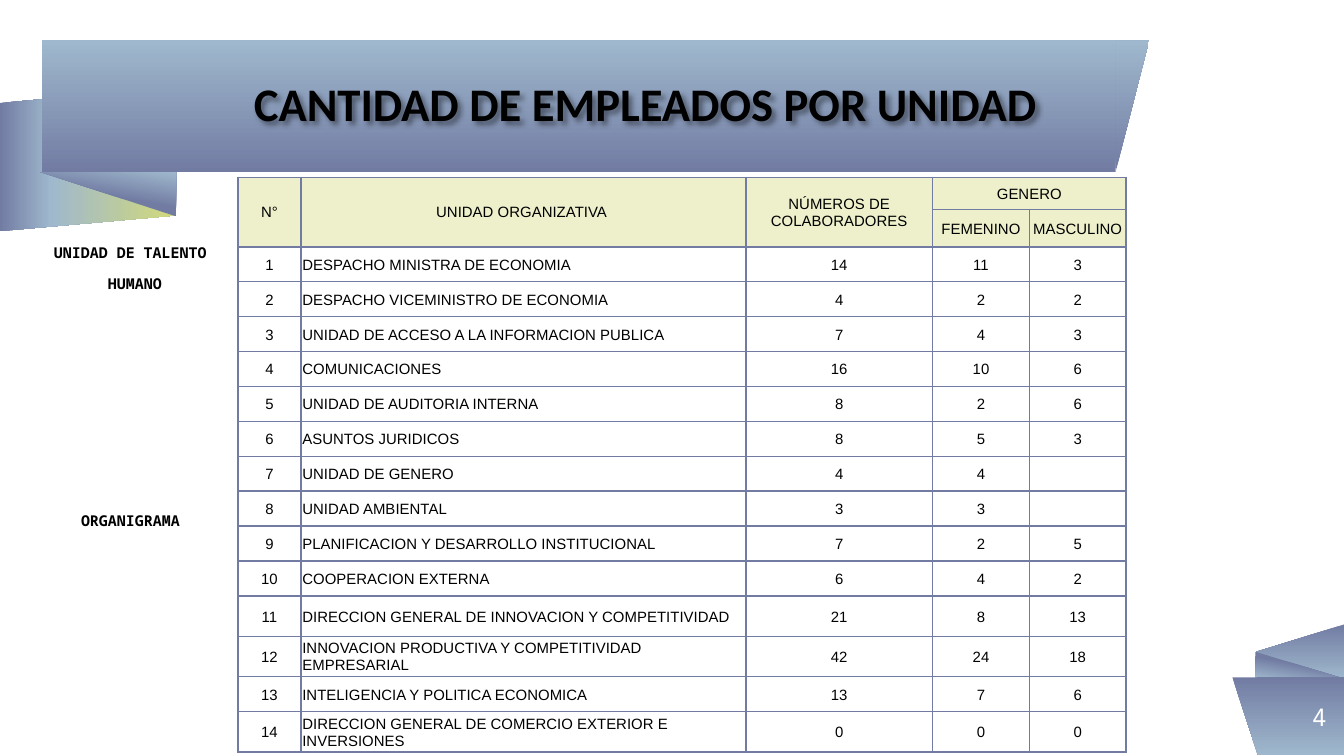
from lxml import etree
from pptx import Presentation, util as u
from pptx.dml.color import RGBColor
from pptx.enum import shapes, text
from pptx.oxml import parse_xml
from pptx.oxml.ns import qn

W = 10
H = W * 9 / 16
NS = 'xmlns:a="http://schemas.openxmlformats.org/drawingml/2006/main"'
PURPLE, BLUE, LIME, CREAM = "727CA3", "9FB8CD", "D2DA7A", "EDF0CA"
BLACK, WHITE = "000000", "FFFFFF"
MONO = "Noto Sans Mono"

# Content
TITLE = "CANTIDAD DE EMPLEADOS POR UNIDAD"
NUMBER = "4"
SIDE = [("UNIDAD DE TALENTO ", 6), ("HUMANO", 6), ("ORGANIGRAMA ", 116)]  # text, space before
HEAD = [
    ("N°", "UNIDAD ORGANIZATIVA ", "NÚMEROS DE COLABORADORES", "GENERO", ""),
    ("", "", "", "FEMENINO", "MASCULINO"),
]
UNITS = [
    ("DESPACHO MINISTRA DE ECONOMIA", 14, 11, 3),
    ("DESPACHO VICEMINISTRO DE ECONOMIA", 4, 2, 2),
    ("UNIDAD DE ACCESO A LA INFORMACION PUBLICA", 7, 4, 3),
    ("COMUNICACIONES", 16, 10, 6),
    ("UNIDAD DE AUDITORIA INTERNA", 8, 2, 6),
    ("ASUNTOS JURIDICOS", 8, 5, 3),
    ("UNIDAD DE GENERO", 4, 4, ""),
    ("UNIDAD AMBIENTAL", 3, 3, ""),
    ("PLANIFICACION Y DESARROLLO INSTITUCIONAL", 7, 2, 5),
    ("COOPERACION EXTERNA", 6, 4, 2),
    ("DIRECCION GENERAL DE INNOVACION Y COMPETITIVIDAD", 21, 8, 13),
    ("INNOVACION PRODUCTIVA Y COMPETITIVIDAD EMPRESARIAL", 42, 24, 18),
    ("INTELIGENCIA Y POLITICA ECONOMICA", 13, 7, 6),
    ("DIRECCION GENERAL DE COMERCIO EXTERIOR E INVERSIONES", 0, 0, 0),
]
MERGES = [(0, 0, 1, 0), (0, 1, 1, 1), (0, 2, 1, 2), (0, 3, 0, 4)]
COLS = [0.47, 3.31, 1.39, 0.72, 0.72]
HEAD_ROWS = [0.24, 0.25]
ROW, TALL_ROW = 0.26, 0.3
TALL_UNITS = (11, 12, 14)

# Ribbon pieces: preset, box, rotation, flipped, adjustment, gradient stops, angle
FADE = [(0, PURPLE), (100, BLUE)]
FOLD = [(0, PURPLE), (47, PURPLE), (100, BLUE)]
TAIL = [(0, PURPLE), (29, BLUE), (100, LIME)]
S = shapes.MSO_SHAPE
BANNER = (0.31, 0.3, 7.99, 0.98)
CORNER = (9.35, 5.04, 0.65, 0.58)
RIBBONS = [
    (S.PARALLELOGRAM, (0.12, 0.53, 1.07, 1.31), 270, True, 0.109, TAIL, 90),
    (S.RIGHT_TRIANGLE, (0.3, 1.28, 1.01, 0.33), 180, False, None, FOLD, 100),
    (S.RECTANGLE, BANNER, 180, True, None, FADE, 90),
    (S.ISOSCELES_TRIANGLE, (8.3, 0.3, 0.25, 0.98), 180, False, 1, FADE, 90),
    (S.ISOSCELES_TRIANGLE, (9.47, 4.52, 0.41, 0.66), 270, False, 0.5, FADE, 180),
    (S.RIGHT_TRIANGLE, (9.34, 4.85, 0.66, 0.2), 0, False, None, FOLD, 100),
    (S.RECTANGLE, CORNER, 180, False, None, FADE, 270),
    (S.ISOSCELES_TRIANGLE, (9.17, 5.04, 0.19, 0.58), 180, True, 1, FADE, 270),
]


def color(h):
    return RGBColor.from_string(h)


def inches(box):
    return [u.Inches(v) for v in box]


def add_run(p, words, font, size, c=BLACK, bold=False):
    r = p.add_run()
    r.text = words
    r.font.name, r.font.size, r.font.bold = font, u.Pt(size), bold
    r.font.color.rgb = color(c)


def add_ribbon(slide, preset, box, rot, flip, adj, stops, angle):
    sp = slide.shapes.add_shape(preset, *inches(box))
    sp.shadow.inherit = False
    sp.rotation = rot
    sp.line.fill.background()
    if adj is not None:
        sp.adjustments[0] = adj
    if flip:
        sp._element.spPr.find(qn("a:xfrm")).set("flipH", "1")
    marks = "".join(f'<a:gs pos="{pos * 1000}"><a:srgbClr val="{c}"/></a:gs>' for pos, c in stops)
    grad = parse_xml(f'<a:gradFill {NS} rotWithShape="1"><a:gsLst>{marks}</a:gsLst>'
                     f'<a:lin ang="{angle * 60000}" scaled="0"/></a:gradFill>')
    sp._element.spPr.find(qn("a:prstGeom")).addnext(grad)


def add_text(slide, box, anchor):
    sp = slide.shapes.add_textbox(*inches(box))
    tf = sp.text_frame
    tf.word_wrap = True
    tf.vertical_anchor = anchor
    tf.margin_left = tf.margin_right = tf.margin_top = tf.margin_bottom = 0
    return sp


def fill_cell(cell, words, left, fill):
    cell.margin_left = cell.margin_right = cell.margin_top = u.Inches(0.01)
    cell.margin_bottom = 0
    cell.vertical_anchor = text.MSO_ANCHOR.MIDDLE
    p = cell.text_frame.paragraphs[0]
    p.alignment = text.PP_ALIGN.LEFT if left else text.PP_ALIGN.CENTER
    if words:
        add_run(p, words, "Arial", 8)
    etree.SubElement(p._p, qn("a:endParaRPr")).set("sz", "800")
    tc_pr = cell._tc.get_or_add_tcPr()
    for side in ("lnL", "lnR", "lnT", "lnB"):
        tc_pr.append(parse_xml(f'<a:{side} {NS} w="12700"><a:solidFill>'
                               f'<a:srgbClr val="{PURPLE}"/></a:solidFill></a:{side}>'))
    if fill:
        cell.fill.solid()
        cell.fill.fore_color.rgb = color(fill)
    else:
        cell.fill.background()


prs = Presentation()
prs.slide_width, prs.slide_height = u.Inches(W), u.Inches(H)
slide = prs.slides.add_slide(prs.slide_layouts[6])

for ribbon in RIBBONS:
    add_ribbon(slide, *ribbon)

# Title with a soft shadow
sp = add_text(slide, (1.06, 0.3, 7.48, 0.98), text.MSO_ANCHOR.MIDDLE)
sp._element.spPr.append(parse_xml(
    f'<a:effectLst {NS}><a:outerShdw blurRad="38100" dist="25400" dir="2700000">'
    '<a:srgbClr val="000000"><a:alpha val="43000"/></a:srgbClr></a:outerShdw></a:effectLst>'))
p = sp.text_frame.paragraphs[0]
p.alignment, p.line_spacing = text.PP_ALIGN.CENTER, 0.9
add_run(p, TITLE, "Calibri", 25, bold=True)

# Slide number
p = add_text(slide, (9.34, 5.04, 0.53, 0.58), text.MSO_ANCHOR.MIDDLE).text_frame.paragraphs[0]
p.alignment = text.PP_ALIGN.RIGHT
add_run(p, NUMBER, MONO, 13, WHITE)

# Side labels
tf = add_text(slide, (0, 1.79, 1.93, 1.1), text.MSO_ANCHOR.TOP).text_frame
tf.margin_left = u.Inches(0.08)
for i, (words, before) in enumerate(SIDE):
    p = tf.add_paragraph() if i else tf.paragraphs[0]
    p.alignment, p.line_spacing, p.space_before = text.PP_ALIGN.CENTER, 1.15, u.Pt(before)
    add_run(p, words, MONO, 8, bold=True)

# Staff table
rows = HEAD + [(i, *unit) for i, unit in enumerate(UNITS, 1)]
heights = HEAD_ROWS + [TALL_ROW if i in TALL_UNITS else ROW for i in range(1, len(UNITS) + 1)]
table = slide.shapes.add_table(len(rows), len(COLS),
                               *inches((1.77, 1.32, sum(COLS), sum(heights)))).table
table.first_row = table.horz_banding = False
for col, width in zip(table.columns, COLS):
    col.width = u.Inches(width)
for i, (values, height) in enumerate(zip(rows, heights)):
    table.rows[i].height = u.Inches(height)
    is_head = i < len(HEAD)
    for j, value in enumerate(values):
        fill_cell(table.cell(i, j), str(value), j == 1 and not is_head, CREAM if is_head else None)
for r1, c1, r2, c2 in MERGES:
    table.cell(r1, c1).merge(table.cell(r2, c2))

prs.save("out.pptx")
